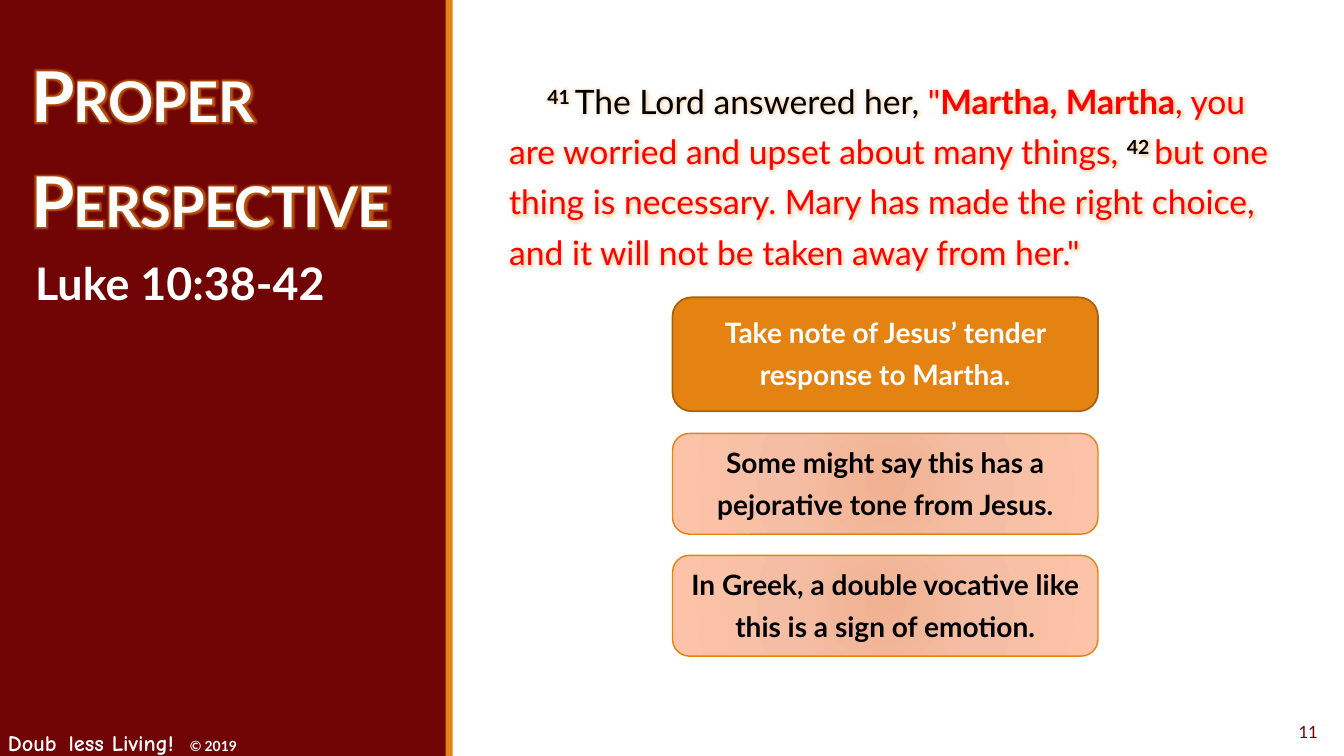
from lxml import etree
from pptx import Presentation
from pptx.dml.color import RGBColor
from pptx.enum import shapes, text
from pptx.oxml import parse_xml
from pptx.oxml import ns
from pptx.util import Inches, Pt

C = {"maroon": "710505", "orange": "E48312", "brown": "A9610D", "white": "FFFFFF",
     "black": "000000", "red": "FF0000", "peach": "FDC3A8",
     "peach_mid": "F5BEA4", "peach_dark": "F0B191"}
MIDDLE = text.MSO_ANCHOR.MIDDLE

prs = Presentation()
prs.slide_width, prs.slide_height = Inches(13.33), Inches(7.5)
s = prs.slides.add_slide(prs.slide_layouts[6])


def add_run(p, words, size, color, bold=True, font="Lato", glow=None, **attrs):
    r = p.add_run()
    r.text = words
    r.font.size, r.font.bold, r.font.name = Pt(size), bold, font
    r.font.color.rgb = RGBColor.from_string(C[color])
    rPr = r.font._element
    for name, value in attrs.items():
        rPr.set(name, value)
    if glow:
        radius, alpha = glow
        rPr.find(ns.qn("a:solidFill")).addnext(parse_xml(
            f'<a:effectLst {ns.nsdecls("a")}><a:glow rad="{Inches(radius)}">'
            f'<a:srgbClr val="{C["orange"]}"><a:alpha val="{alpha}000"/></a:srgbClr>'
            '</a:glow></a:effectLst>'))


def add_text(x, y, w, h):
    tf = s.shapes.add_textbox(Inches(x), Inches(y), Inches(w), Inches(h)).text_frame
    tf.word_wrap = True
    return tf


# Side panel and its edge
for x, w, color in [(0, 4.43, "maroon"), (4.42, 0.07, "orange")]:
    sp = s.shapes.add_shape(shapes.MSO_SHAPE.RECTANGLE, Inches(x), 0, Inches(w), Inches(7.5))
    sp.shadow.inherit = False
    sp.fill.solid()
    sp.fill.fore_color.rgb = RGBColor.from_string(C[color])
    sp.line.fill.background()

# Footer and slide number
p = add_text(-0.02, 7.07, 3.92, 0.5).paragraphs[0]
for words, size, font in [("Doub", 16, "Comic Neue"), (" ", 24, "Comic Neue"),
                          ("less Living!  ", 16, "Comic Neue"), ("© 2019", 10, "Lato")]:
    add_run(p, words, size, "white", font=font)

tf = add_text(11.82, 7.06, 1.35, 0.4)
tf.vertical_anchor = MIDDLE
p = tf.paragraphs[0]
p.alignment = text.PP_ALIGN.RIGHT
add_run(p, "11", 12, "maroon", bold=False)

# Bible passage
tf = add_text(5.05, 0.65, 7.62, 6.42)
tf.margin_left = tf.margin_right = 0
p = tf.paragraphs[0]
p.line_spacing, p.space_after = 1.25, Pt(2)
p._p.get_or_add_pPr().set("indent", str(Inches(0.38)))
verse = {"baseline": "30000"}
for words, color, bold, attrs in [
        ("41 ", "black", True, verse),
        ("The Lord answered her, ", "black", False, {}),
        ('"', "red", False, {}),
        ("Martha, Martha", "red", True, {}),
        (", you are worried and upset about many things, ", "red", False, {}),
        ("42 ", "black", True, verse),
        ("but one thing is necessary. Mary has made the right choice, "
         'and it will not be taken away from her."', "red", False, {})]:
    add_run(p, words, 24, color, bold, glow=(0.07, 40), **attrs)

# Title and reference
p = add_text(0.21, 0.26, 4, 2.98).paragraphs[0]
p.line_spacing = 1.25
add_run(p, "Proper Perspective", 50, "white", glow=(0.07, 60), cap="small", spc="-50")
p = add_text(0.25, 2.49, 3.71, 0.64).paragraphs[0]
add_run(p, "Luke 10:38-42", 32, "white")

# Comment boxes
stops = "".join(f'<a:gs pos="{pos}000"><a:srgbClr val="{C[color]}"/></a:gs>'
                for pos, color in [(0, "peach_dark"), (45, "peach_mid"), (100, "peach")])
gradient = (f'<a:gradFill {ns.nsdecls("a")} rotWithShape="1"><a:gsLst>{stops}</a:gsLst>'
            '<a:path path="circle"><a:fillToRect l="100000" t="100000" r="100000" b="100000"/>'
            '</a:path></a:gradFill>')
for y, h, main, words in [
        (2.95, 1.13, True, "Take note of Jesus’ tender response to Martha."),
        (4.3, 1, False, "Some might say this has a pejorative tone from Jesus."),
        (5.51, 1, False, "In Greek, a double vocative like this is a sign of emotion.")]:
    sp = s.shapes.add_shape(shapes.MSO_SHAPE.ROUNDED_RECTANGLE,
                            Inches(6.67), Inches(y), Inches(4.22), Inches(h))
    sp.shadow.inherit = False
    if main:
        sp.fill.solid()
        sp.fill.fore_color.rgb = RGBColor.from_string(C["orange"])
    else:
        sp._element.spPr.find(ns.qn("a:prstGeom")).addnext(etree.fromstring(gradient))
    sp.line.color.rgb = RGBColor.from_string(C["brown" if main else "orange"])
    sp.line.width = Pt(1.25 if main else 1)
    tf = sp.text_frame
    tf.word_wrap, tf.vertical_anchor = True, MIDDLE
    tf.margin_top, tf.margin_bottom = 0, Inches(0.1)
    p = tf.paragraphs[0]
    p.alignment, p.line_spacing = text.PP_ALIGN.CENTER, 1.25
    add_run(p, words, 20, "white" if main else "black")

prs.save("out.pptx")
